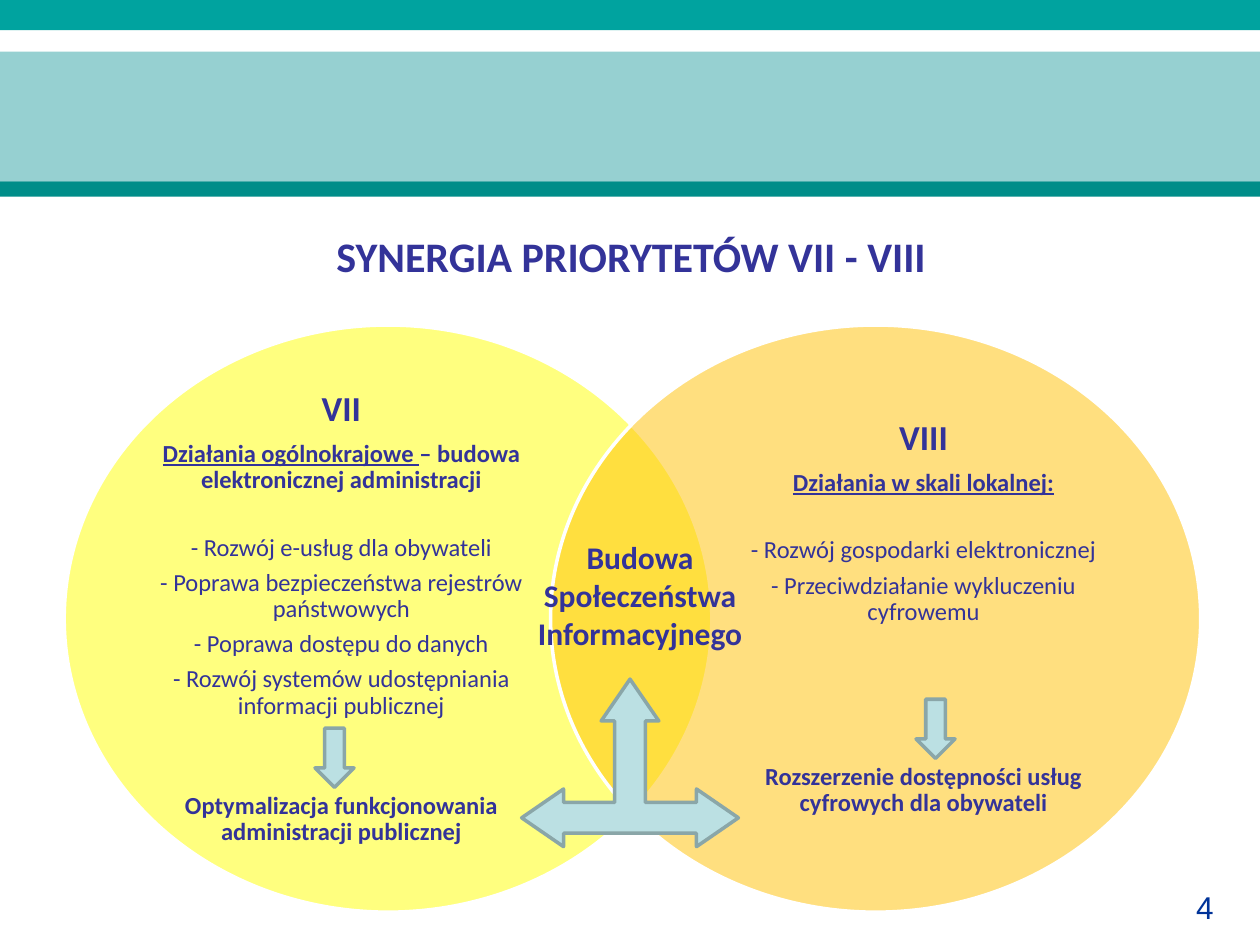
from dataclasses import dataclass

from lxml.etree import SubElement
from pptx import Presentation
from pptx.dml.color import RGBColor
from pptx.enum.shapes import MSO_SHAPE
from pptx.enum.text import MSO_ANCHOR, PP_ALIGN
from pptx.oxml.ns import qn
from pptx.util import Inches, Pt


@dataclass(frozen=True)
class Theme:
    band_top: str = "00A39F"
    band_middle: str = "96D0D1"
    band_bottom: str = "008D89"
    national: str = "FFFF00"
    local: str = "FFC000"
    white: str = "FFFFFF"
    arrow: str = "BBE0E3"
    arrow_edge: str = "8AA6A8"
    ink: str = "333399"
    number: str = "003399"
    font: str = "Calibri"
    number_font: str = "Arial"
    title_size: int = 24
    heading_size: int = 20
    label_size: int = 18
    body_size: int = 14
    line_spacing: float = 0.9
    space_share: float = 0.35
    edge_width: int = 2


class SlideBuilder:
    def __init__(self, slide, theme):
        self.slide = slide
        self.theme = theme

    def shape(self, kind, box, fill, edge=None, opacity=None, adjustments=()):
        shape = self.slide.shapes.add_shape(kind, *map(Inches, box))
        shape.shadow.inherit = False
        shape.fill.solid()
        shape.fill.fore_color.rgb = RGBColor.from_string(fill)
        if opacity is not None:
            color = shape._element.spPr.find(f"{qn('a:solidFill')}/{qn('a:srgbClr')}")
            SubElement(color, qn("a:alpha"), val=str(opacity * 1000))
        if edge:
            shape.line.color.rgb = RGBColor.from_string(edge)
            shape.line.width = Pt(self.theme.edge_width)
        else:
            shape.line.fill.background()
        for index, value in enumerate(adjustments):
            shape.adjustments[index] = value

    def band(self, top, height, fill):
        self.shape(MSO_SHAPE.RECTANGLE, (0, top, 10, height), fill)

    def circle(self, left, width, fill):
        box = (left, 2.58, width, 4.66)
        self.shape(MSO_SHAPE.OVAL, box, fill, self.theme.white, opacity=50)

    def arrow(self, kind, box, adjustments=()):
        self.shape(kind, box, self.theme.arrow, self.theme.arrow_edge, adjustments=adjustments)

    def text_frame(self, box):
        frame = self.slide.shapes.add_textbox(*map(Inches, box)).text_frame
        frame.word_wrap = True
        return frame

    def run(self, paragraph, text, **formats):
        run = paragraph.add_run()
        run.text = text
        color = formats.pop("color", self.theme.ink)
        run.font.color.rgb = RGBColor.from_string(color)
        for name, value in ({"name": self.theme.font} | formats).items():
            setattr(run.font, name, value)

    def label(self, box, text, size, align=PP_ALIGN.CENTER, **formats):
        paragraph = self.text_frame(box).paragraphs[0]
        paragraph.alignment = align
        self.run(paragraph, text, size=Pt(size), **formats)

    def column(self, box, entries):
        frame = self.text_frame(box)
        frame.vertical_anchor = MSO_ANCHOR.MIDDLE
        for side in ("left", "top", "right", "bottom"):
            setattr(frame, f"margin_{side}", 0)
        for index, (size, gap, runs) in enumerate(entries):
            paragraph = frame.add_paragraph() if index else frame.paragraphs[0]
            settings = {
                "alignment": PP_ALIGN.CENTER,
                "line_spacing": self.theme.line_spacing,
                "space_before": Pt(gap),
                "space_after": Pt(size * self.theme.space_share),
            }
            for name, value in settings.items():
                setattr(paragraph, name, value)
            for text, formats in runs:
                self.run(paragraph, text, size=Pt(size), **formats)


def column_entries(theme, heading, subtitle, actions, result, result_gap):
    bold = {"bold": True}
    yield theme.heading_size, 0, [(heading, bold)]
    yield theme.body_size, 0, subtitle
    for index, action in enumerate(actions):
        yield theme.body_size, 0 if index else 18.5, [(f"- {action}", {})]
    yield theme.body_size, result_gap, [(result, bold)]


def main():
    presentation = Presentation()
    presentation.slide_width = Inches(10)
    presentation.slide_height = Inches(7.5)
    slide = presentation.slides.add_slide(presentation.slide_layouts[6])
    theme = Theme()
    builder = SlideBuilder(slide, theme)
    underlined = {"bold": True, "underline": True}

    builder.label((9.02, 7, 0.71, 0.4), "4", theme.label_size, PP_ALIGN.RIGHT,
                  name=theme.number_font, color=theme.number)
    builder.band(0, 0.24, theme.band_top)
    builder.band(0.41, 1.03, theme.band_middle)
    builder.band(1.44, 0.12, theme.band_bottom)
    builder.label((0.51, 1.78, 9, 0.64), "SYNERGIA PRIORYTETÓW VII - VIII",
                  theme.title_size, bold=True)

    builder.circle(0.51, 5.14, theme.national)
    builder.column((1.23, 3.13, 2.96, 3.56), column_entries(
        theme, "VII",
        [("Działania ogólnokrajowe ", underlined),
         ("– budowa elektronicznej administracji", {"bold": True})],
        ["Rozwój e-usług dla obywateli",
         "Poprawa bezpieczeństwa rejestrów państwowych",
         "Poprawa dostępu do danych",
         "Rozwój systemów udostępniania informacji publicznej"],
        "Optymalizacja funkcjonowania administracji publicznej", 37))

    builder.circle(4.37, 5.16, theme.local)
    builder.column((5.84, 3.13, 2.98, 3.56), column_entries(
        theme, "VIII",
        [("Działania w skali lokalnej:", underlined)],
        ["Rozwój gospodarki elektronicznej",
         "Przeciwdziałanie wykluczeniu cyfrowemu"],
        "Rozszerzenie dostępności usług cyfrowych dla obywateli", 74))

    for left, top in ((7.27, 5.55), (2.5, 5.78)):
        builder.arrow(MSO_SHAPE.DOWN_ARROW, (left, top, 0.31, 0.47))
    builder.label((4.14, 4.22, 1.88, 1.01), "Budowa Społeczeństwa Informacyjnego",
                  theme.label_size, bold=True)
    builder.arrow(MSO_SHAPE.LEFT_RIGHT_UP_ARROW, (4.14, 5.39, 1.72, 1.33), (0.184, 0.172, 0.25))

    presentation.save("out.pptx")


if __name__ == "__main__":
    main()
